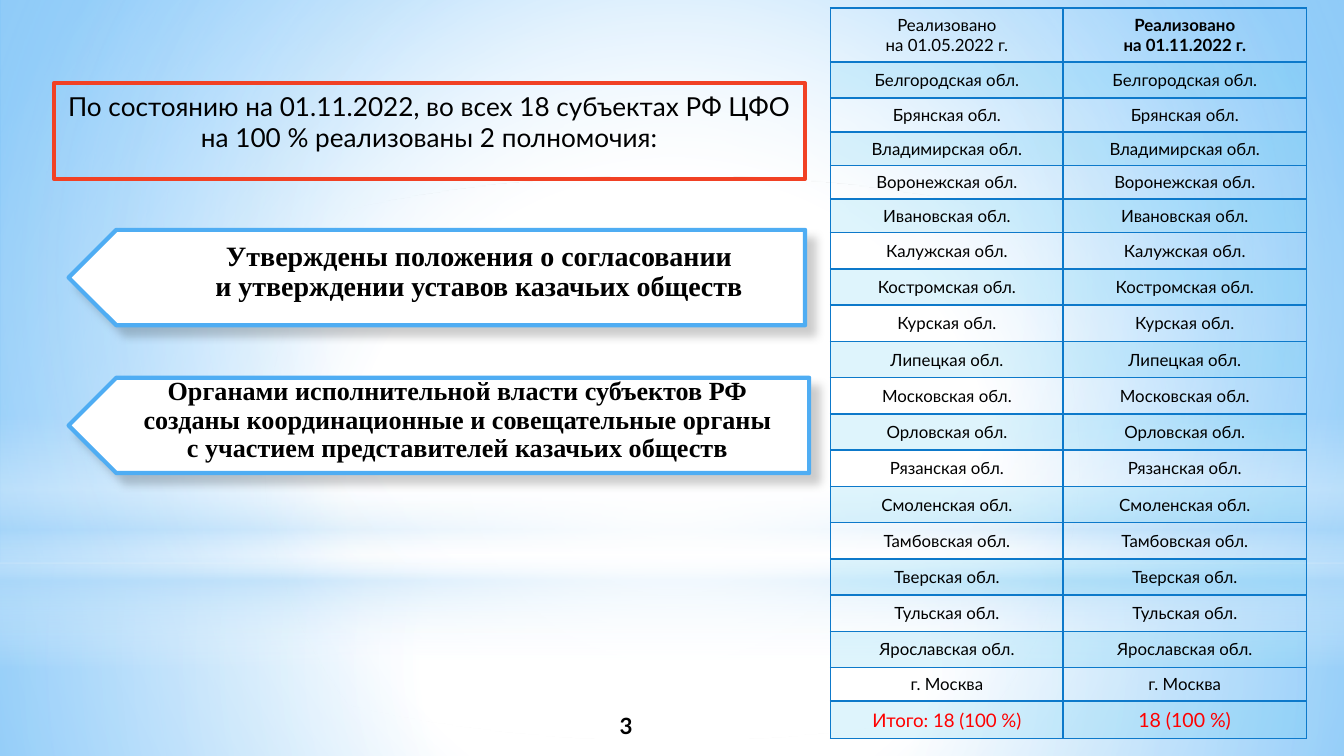
from lxml import etree
from pptx import Presentation
from pptx import util as u
from pptx.dml.color import RGBColor
from pptx.enum import shapes, text
from pptx.oxml.ns import qn

COLORS = {"white": "FFFFFF", "black": "000000", "sky": "008BF4", "haze": "B4DCFA",
          "grid": "0D79CA", "band": "5ECCF3", "red": "FF0000", "frame": "F14124",
          "arrow": "4FADF3"}
CENTER = (50, 50, 50, 50)


def rgb(name):
    return RGBColor.from_string(COLORS[name])


def node(parent, tag, **attrs):
    return etree.SubElement(parent, qn(tag), {k: str(v) for k, v in attrs.items()})


def add_color(parent, name, alpha=100):
    color = node(parent, "a:srgbClr", val=COLORS[name])
    if alpha < 100:
        node(color, "a:alpha", val=alpha * 1000)


def write(frame, content, size=9, font="Lato", color="black", bold=False,
          spacing=None, anchor=text.MSO_ANCHOR.MIDDLE):
    """Put centred text with one format into a text frame."""
    frame.word_wrap = True
    frame.vertical_anchor = anchor
    paragraph = frame.paragraphs[0]
    paragraph.text = content
    paragraph.alignment = text.PP_ALIGN.CENTER
    if spacing:
        paragraph.line_spacing = spacing
    for run in paragraph.runs:
        run.font.size = u.Pt(size)
        run.font.name = font
        run.font.bold = bold
        run.font.color.rgb = rgb(color)


class SlideBuilder:
    def __init__(self, slide):
        self.slide = slide

    def gradient(self, fill, owner, stops, focus=None):
        """Radial fill around focus, or a vertical one without it."""
        fill.gradient()
        grad = next(owner.iter(qn("a:gradFill")))
        for child in list(grad):
            grad.remove(child)
        stop_list = node(grad, "a:gsLst")
        for position, color, alpha in stops:
            add_color(node(stop_list, "a:gs", pos=position * 1000), color, alpha)
        if focus:
            sides = {side: value * 1000 for side, value in zip("ltrb", focus)}
            node(node(grad, "a:path", path="circle"), "a:fillToRect", **sides)
        else:
            node(grad, "a:lin", ang=90 * 60000, scaled=0)

    def background(self, stops, focus):
        self.gradient(self.slide.background.fill, self.slide._element, stops, focus)

    def shape(self, kind, box, fill=None, line=None, parent=None):
        item = (parent or self.slide).shapes.add_shape(kind, *map(u.Inches, box))
        item.shadow.inherit = False
        if fill:
            item.fill.solid()
            item.fill.fore_color.rgb = rgb(fill)
        else:
            item.fill.background()
        if line:
            item.line.color.rgb = rgb(line)
            item.line.width = u.Pt(2.25)
        else:
            item.line.fill.background()
        return item

    def glow(self, kind, box, stops, focus=None):
        item = self.shape(kind, box)
        self.gradient(item.fill, item._element.spPr, stops, focus)

    def label(self, box, content, parent=None, left=0.1, **style):
        frame = (parent or self.slide).shapes.add_textbox(*map(u.Inches, box)).text_frame
        frame.margin_left = u.Inches(left)
        write(frame, content, **style)

    def arrow(self, box, label_box, content, size):
        group = self.slide.shapes.add_group_shape()
        plate = self.shape(shapes.MSO_SHAPE.PENTAGON, box, "white", "arrow", group)
        plate.rotation = 180
        effects = plate._element.spPr.find(qn("a:effectLst"))
        shadow = node(effects, "a:outerShdw", blurRad=u.Pt(5), dist=u.Pt(6),
                      dir=45 * 60000, algn="tl", rotWithShape=0)
        add_color(shadow, "black", 20)
        self.label(label_box, content, group, left=0.25, size=size,
                   font="Times New Roman", bold=True, spacing=0.9)

    def table(self, box, rows, widths, heights, styles):
        grid = self.slide.shapes.add_table(len(rows), len(widths), *map(u.Inches, box)).table
        grid.first_row = grid.horz_banding = False
        for column, width in zip(grid.columns, widths):
            column.width = u.Inches(width)
        for r, (row, height) in enumerate(zip(rows, heights)):
            grid.rows[r].height = u.Inches(height)
            for c, content in enumerate(row):
                self.cell(grid.cell(r, c), content, r % 2 == 1, styles.get((r, c), {}))

    def cell(self, cell, content, banded, style):
        write(cell.text_frame, content, **style)
        cell.vertical_anchor = text.MSO_ANCHOR.MIDDLE
        properties = cell._tc.get_or_add_tcPr()
        for side in ("a:lnL", "a:lnR", "a:lnT", "a:lnB"):
            border = node(properties, side, w=u.Pt(1))
            add_color(node(border, "a:solidFill"), "grid")
        if banded:
            add_color(node(properties, "a:solidFill"), "band", 20)
        else:
            cell.fill.background()


def main():
    deck = Presentation()
    deck.slide_width, deck.slide_height = u.Inches(10), u.Inches(5.625)
    page = SlideBuilder(deck.slides.add_slide(deck.slide_layouts[6]))
    rect, oval = shapes.MSO_SHAPE.RECTANGLE, shapes.MSO_SHAPE.OVAL

    # Backdrop of soft light
    page.background([(0, "white", 100), (42, "white", 100), (100, "sky", 100)],
                    (24, 44, 24, 12))
    page.glow(rect, (0, 4.19, 10, 1.44),
              [(0, "white", 91), (37, "white", 76), (100, "haze", 79)], CENTER)
    page.glow(rect, (0, 0, 10, 4.19),
              [(0, "white", 89), (48, "white", 62), (100, "haze", 79)], CENTER)
    page.glow(rect, (0, 3.09, 10, 1.88),
              [(0, "white", 0), (29, "white", 30), (45, "haze", 40),
               (55, "white", 26), (65, "haze", 60), (100, "white", 0)])
    page.glow(oval, (0, 1.31, 10, 4.19), [(0, "white", 100), (56, "white", 0)], CENTER)

    # Regions table
    regions = ["Белгородская", "Брянская", "Владимирская", "Воронежская", "Ивановская",
               "Калужская", "Костромская", "Курская", "Липецкая", "Московская",
               "Орловская", "Рязанская", "Смоленская", "Тамбовская", "Тверская",
               "Тульская", "Ярославская"]
    places = [f"{region} обл." for region in regions] + ["г. Москва"]
    rows = [("Реализовано\nна 01.05.2022 г.", "Реализовано\nна 01.11.2022 г.")]
    rows += [(place, place) for place in places]
    rows.append(("Итого: 18 (100 %)", "18 (100 %)"))
    heights = [0.39, 0.27] + [0.25] * 4 + [0.27] * 12 + [0.25, 0.27]
    styles = {(0, 1): {"bold": True},
              (19, 0): {"size": 10, "color": "red"},
              (19, 1): {"size": 10.5, "color": "red"}}
    page.table((6.18, 0.06, 3.54, 5.47), rows, (1.73, 1.81), heights, styles)

    # Page number
    page.label((3.66, 5.25, 2, 0.3), "3", size=12, bold=True)

    # Framed summary
    summary = page.shape(rect, (0.4, 0.62, 5.59, 0.71), line="frame")
    write(summary.text_frame, "По состоянию на 01.11.2022, во всех 18 субъектах РФ ЦФО "
          "на 100 % реализованы 2 полномочия:", size=14, anchor=text.MSO_ANCHOR.TOP)

    # Two completed powers
    page.arrow((0.51, 1.71, 5.48, 0.71), (0.96, 1.71, 5.06, 0.64),
               "Утверждены положения о согласовании\n"
               "и утверждении уставов казачьих обществ", 15)
    page.arrow((0.51, 2.81, 5.51, 0.71), (0.63, 2.81, 5.4, 0.64),
               "Органами исполнительной власти субъектов РФ созданы координационные "
               "и совещательные органы\nс участием представителей казачьих обществ", 14)

    deck.save("out.pptx")


if __name__ == "__main__":
    main()
